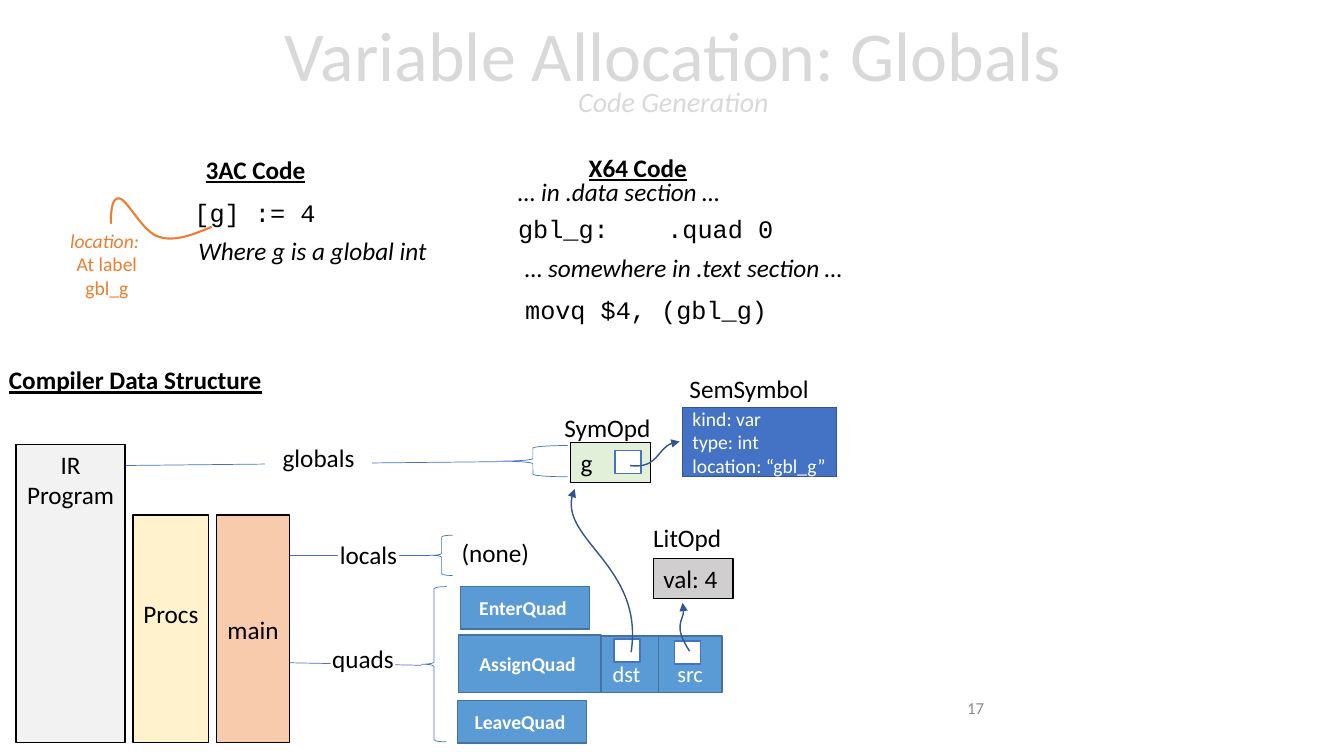
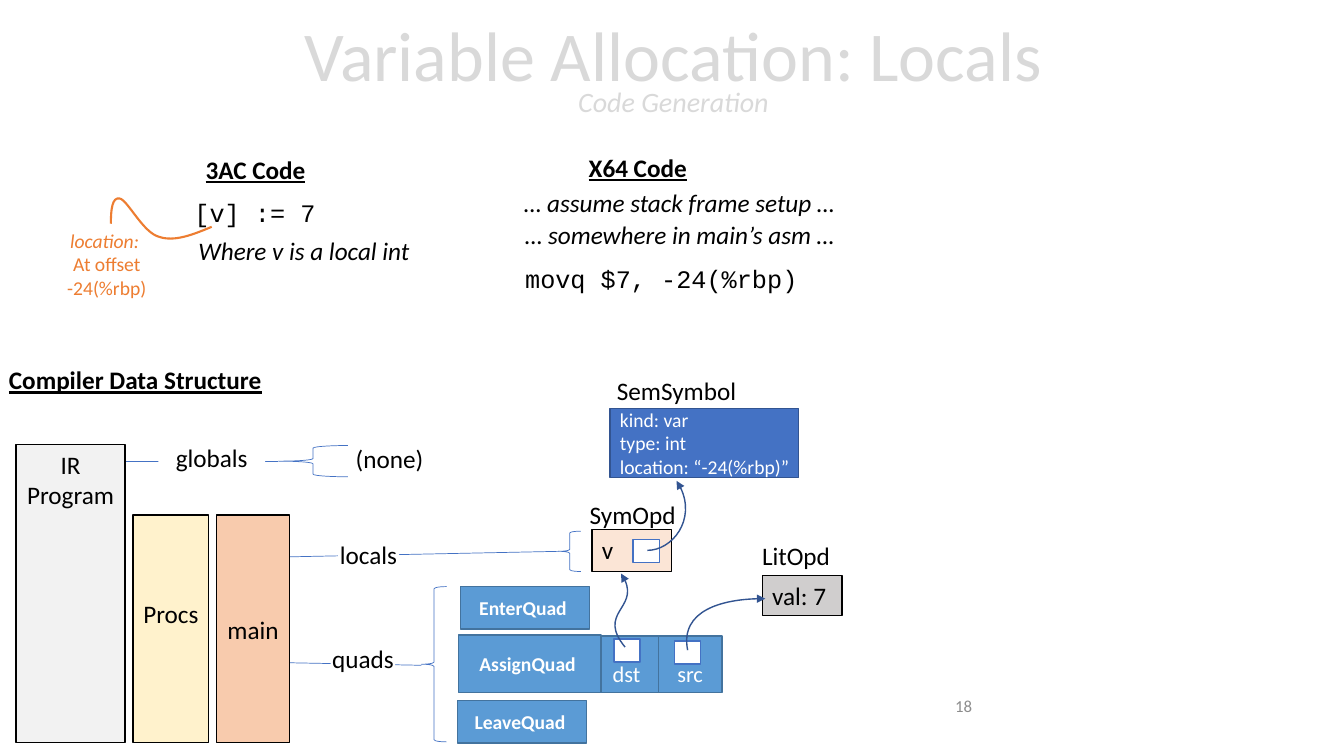
from lxml.etree import SubElement
from pptx import Presentation
from pptx.dml.color import RGBColor
from pptx.enum.shapes import MSO_CONNECTOR, MSO_SHAPE
from pptx.enum.text import MSO_ANCHOR, MSO_AUTO_SIZE, PP_ALIGN
from pptx.oxml.ns import qn
from pptx.util import Pt

PX = 9144
BLACK = RGBColor(0x00, 0x00, 0x00)
WHITE = RGBColor(0xFF, 0xFF, 0xFF)
TITLE_GRAY = RGBColor(0xD9, 0xD9, 0xD9)
NUMBER_GRAY = RGBColor(0x8C, 0x8C, 0x8C)
ORANGE = RGBColor(0xED, 0x7D, 0x31)
BLUE = RGBColor(0x44, 0x72, 0xC4)
DARK_BLUE = RGBColor(0x32, 0x54, 0x91)
QUAD_BLUE = RGBColor(0x5B, 0x9B, 0xD5)
QUAD_EDGE = RGBColor(0x43, 0x73, 0x9E)
CREAM = RGBColor(0xFF, 0xF2, 0xCC)
PEACH = RGBColor(0xF8, 0xCB, 0xAD)
PALE_PEACH = RGBColor(0xFB, 0xE5, 0xD6)
PALE_GREEN = RGBColor(0xE2, 0xF0, 0xD9)
PALE_GRAY = RGBColor(0xF2, 0xF2, 0xF2)
GRAY = RGBColor(0xD0, 0xCE, 0xCE)

PLAIN = {}
HEADING = {"bold": True, "underline": True}
NOTE = {"italic": True}
CODE = {"name": "Courier New"}
QUAD = {"bold": True, "size": Pt(14)}
FIELD = {"size": Pt(16)}
SMALL = {"size": Pt(14)}
NUMBER = {"size": Pt(12)}

LEFT, CENTER, RIGHT = PP_ALIGN.LEFT, PP_ALIGN.CENTER, PP_ALIGN.RIGHT
TOP, MIDDLE, BOTTOM = MSO_ANCHOR.TOP, MSO_ANCHOR.MIDDLE, MSO_ANCHOR.BOTTOM

SHARED_TEXTS = [
    ("3AC Code", 194, 148, 119, HEADING),
    ("X64 Code", 574, 146, 118, HEADING),
    ("Compiler Data Structure", -1, 357, 273, HEADING),
]
SHARED_BOXES = [
    ("IR\nProgram", (16, 441, 108, 296), PALE_GRAY, BLACK, BLACK, PLAIN, CENTER, TOP),
    ("Procs", (132, 511, 75, 226), CREAM, BLACK, BLACK, PLAIN, CENTER, MIDDLE),
    ("main", (215, 511, 72, 226), PEACH, BLACK, BLACK, PLAIN, CENTER, MIDDLE),
    ("dst", (590, 631, 63, 56), QUAD_BLUE, QUAD_EDGE, WHITE, FIELD, CENTER, BOTTOM),
    ("src", (653, 631, 63, 56), QUAD_BLUE, QUAD_EDGE, WHITE, FIELD, CENTER, BOTTOM),
    ("EnterQuad ", (457, 582, 128, 42), QUAD_BLUE, QUAD_EDGE, WHITE, QUAD, CENTER, MIDDLE),
    ("AssignQuad ", (455, 630, 141, 57), QUAD_BLUE, QUAD_EDGE, WHITE, QUAD, CENTER, MIDDLE),
    ("LeaveQuad ", (454, 695, 128, 42), QUAD_BLUE, QUAD_EDGE, WHITE, QUAD, CENTER, MIDDLE),
]
SHARED_LABELS = [("quads", (328, 638, 64, 42)), ("locals", (335, 535, 61, 42))]
SHARED_POINTERS = [(609, 634), (669, 636)]
LOCATION_CURVE = [
    (110, 222), (110, 209), (111, 195), (119, 197), (127, 199),
    (142, 231), (158, 235), (173, 240), (191, 233), (210, 225),
]

SLIDES = [
    {
        "title": "Variable Allocation: Globals",
        "number": ("17", (761, 682, 225, 40)),
        "texts": [
            ("… in .data section …", 504, 170, 223, NOTE),
            ("gbl_g:", 504, 207, 126, CODE),
            (".quad 0", 652, 207, 126, CODE),
            ("… somewhere in .text section …", 511, 245, 339, NOTE),
            ("movq $4, (gbl_g)", 511, 287, 261, CODE),
            ("[g] := 4", 183, 191, 141, CODE),
            ("Where g is a global int", 187, 229, 249, NOTE),
            ("SymOpd", 550, 404, 106, PLAIN),
            ("SemSymbol", 674, 365, 140, PLAIN),
            ("(none)", 448, 528, 88, PLAIN),
            ("LitOpd", 638, 513, 88, PLAIN),
        ],
        "location": ("location: \nAt label\ngbl_g", (59, 222, 94, 81)),
        "links": [(109, 462, 494, 458), (270, 551, 427, 551), (259, 657, 418, 660)],
        "braces": [(494, 442, 69, 31), (427, 531, 22, 40), (418, 582, 25, 154)],
        "globals": (263, 439, 106, 42),
        "symbol": ("g", (566, 439, 79, 40), PALE_GREEN),
        "literal": ("val: 4", (648, 554, 79, 40)),
        "semantics": ("kind: var\ntype: int\nlocation: “gbl_g”", (677, 404, 153, 69)),
        "pointer": (610, 447),
        "arrows": [
            [(626, 647), (639, 563), (548, 533), (570, 485)],
            [(625, 462), (653, 465), (651, 440), (674, 438)],
            [(684, 646), (667, 620), (682, 614), (677, 598)],
        ],
    },
    {
        "title": "Variable Allocation: Locals",
        "number": ("18", (749, 680, 225, 40)),
        "texts": [
            ("… assume stack frame setup …", 510, 181, 340, NOTE),
            ("… somewhere in main’s asm …", 511, 213, 330, NOTE),
            ("movq $7, -24(%rbp)", 511, 256, 292, CODE),
            ("[v] := 7", 183, 191, 141, CODE),
            ("Where v is a local int", 187, 229, 232, NOTE),
            ("SymOpd", 575, 490, 106, PLAIN),
            ("SemSymbol", 602, 367, 140, PLAIN),
            ("(none)", 343, 435, 88, PLAIN),
            ("LitOpd", 746, 531, 88, PLAIN),
        ],
        "location": ("location: \nAt offset\n-24(%rbp)", (56, 222, 100, 81)),
        "links": [(49, 458, 276, 458), (259, 553, 554, 547), (259, 657, 418, 660)],
        "braces": [(276, 442, 69, 31), (554, 527, 22, 40), (418, 582, 25, 154)],
        "globals": (157, 439, 106, 42),
        "symbol": ("v", (587, 525, 79, 42), PALE_PEACH),
        "literal": ("val: 7", (756, 571, 79, 40)),
        "semantics": ("kind: var\ntype: int\nlocation: “-24(%rbp)”", (605, 405, 187, 69)),
        "pointer": (628, 535),
        "arrows": [
            [(620, 642), (592, 608), (639, 603), (616, 569)],
            [(642, 546), (667, 546), (694, 511), (671, 477)],
            [(682, 645), (674, 605), (724, 593), (759, 594)],
        ],
    },
]


def write(shape, text, color=BLACK, style=PLAIN, align=LEFT, anchor=TOP):
    frame = shape.text_frame
    frame.text = text
    frame.vertical_anchor = anchor
    for paragraph in frame.paragraphs:
        paragraph.alignment = align
        for run in paragraph.runs:
            for name, value in ({"name": "Calibri", "size": Pt(18)} | style).items():
                setattr(run.font, name, value)
            run.font.color.rgb = color
    return frame


def draw(slide, kind, place, fill=None, edge=None, weight=1):
    shape = slide.shapes.add_shape(kind, *[value * PX for value in place])
    shape.shadow.inherit = False
    if fill is None:
        shape.fill.background()
    else:
        shape.fill.solid()
        shape.fill.fore_color.rgb = fill
    if edge is None:
        shape.line.fill.background()
    else:
        shape.line.color.rgb = edge
        shape.line.width = Pt(weight)
    return shape


presentation = Presentation()
presentation.slide_width = 1333 * PX
presentation.slide_height = 750 * PX

for content in SLIDES:
    slide = presentation.slides.add_slide(presentation.slide_layouts[5])

    title = slide.shapes.title
    title_place = {"left": 2, "top": 3, "width": 1332, "height": 145}
    for name, value in title_place.items():
        setattr(title, name, value * PX)
    title.text_frame.auto_size = MSO_AUTO_SIZE.NONE
    write(title, content["title"], TITLE_GRAY, {"size": Pt(50)}, CENTER, MIDDLE)
    paragraph = title.text_frame.paragraphs[0]
    paragraph.line_spacing = 0.7
    paragraph.add_line_break()
    subtitle = paragraph.add_run()
    subtitle.text = "Code Generation"
    for name, value in {"name": "Calibri", "size": Pt(20), "italic": True}.items():
        setattr(subtitle.font, name, value)
    subtitle.font.color.rgb = TITLE_GRAY

    for left, top, right, bottom in content["links"]:
        link = slide.shapes.add_connector(
            MSO_CONNECTOR.STRAIGHT, left * PX, top * PX, right * PX, bottom * PX
        )
        link.line.color.rgb = BLUE
        link.line.width = Pt(0.5)
        SubElement(link._element.spPr, qn("a:effectLst"))

    for place in content["braces"]:
        draw(slide, MSO_SHAPE.LEFT_BRACE, place, edge=BLUE, weight=0.5)

    symbol, symbol_place, symbol_fill = content["symbol"]
    boxes = SHARED_BOXES + [
        (symbol, symbol_place, symbol_fill, BLACK, BLACK, PLAIN, LEFT, TOP),
        (*content["literal"], GRAY, BLACK, BLACK, PLAIN, LEFT, TOP),
        (*content["semantics"], BLUE, DARK_BLUE, WHITE, SMALL, LEFT, MIDDLE),
    ]
    for text, place, fill, edge, color, style, align, anchor in boxes:
        box = draw(slide, MSO_SHAPE.RECTANGLE, place, fill, edge)
        frame = write(box, text, color, style, align, anchor)
        if text == "Procs":
            frame.margin_bottom = 35 * PX
        if style is SMALL:
            frame.margin_right = 0

    for text, place in SHARED_LABELS + [("globals", content["globals"])]:
        label = draw(slide, MSO_SHAPE.RECTANGLE, place, WHITE)
        frame = write(label, text, align=CENTER)
        for side in ("left", "top", "right", "bottom"):
            setattr(frame, f"margin_{side}", 0)

    for left, top in SHARED_POINTERS + [content["pointer"]]:
        draw(slide, MSO_SHAPE.RECTANGLE, (left, top, 26, 23), WHITE, BLUE)

    for text, left, top, width, style in SHARED_TEXTS + content["texts"]:
        textbox = slide.shapes.add_textbox(left * PX, top * PX, width * PX, 40 * PX)
        frame = write(textbox, text, style=style)
        frame.word_wrap = False
        frame.auto_size = MSO_AUTO_SIZE.SHAPE_TO_FIT_TEXT

    for (text, place), color, style, align, anchor in [
        (content["location"], ORANGE, SMALL, CENTER, TOP),
        (content["number"], NUMBER_GRAY, NUMBER, RIGHT, MIDDLE),
    ]:
        textbox = slide.shapes.add_textbox(*[value * PX for value in place])
        frame = write(textbox, text, color, style, align, anchor)
        frame.word_wrap = True
        if color == ORANGE:
            frame.paragraphs[0].runs[0].font.italic = True

    curves = [(LOCATION_CURVE, ORANGE, 1.5)]
    curves += [(points, DARK_BLUE, 1) for points in content["arrows"]]
    for points, color, weight in curves:
        builder = slide.shapes.build_freeform(*points[0], scale=PX)
        builder.add_line_segments(points[1:], close=False)
        curve = builder.convert_to_shape()
        curve.shadow.inherit = False
        curve.fill.background()
        curve.line.color.rgb = color
        curve.line.width = Pt(weight)
        segments = list(curve._element.iter(qn("a:lnTo")))
        outline = segments[0].getparent()
        for start in range(0, len(segments), 3):
            bezier = SubElement(outline, qn("a:cubicBezTo"))
            for segment in segments[start:start + 3]:
                bezier.append(segment[0])
                outline.remove(segment)
        if color == DARK_BLUE:
            outline_format = curve._element.spPr.find(qn("a:ln"))
            SubElement(outline_format, qn("a:tailEnd"), type="triangle")

presentation.save("out.pptx")
